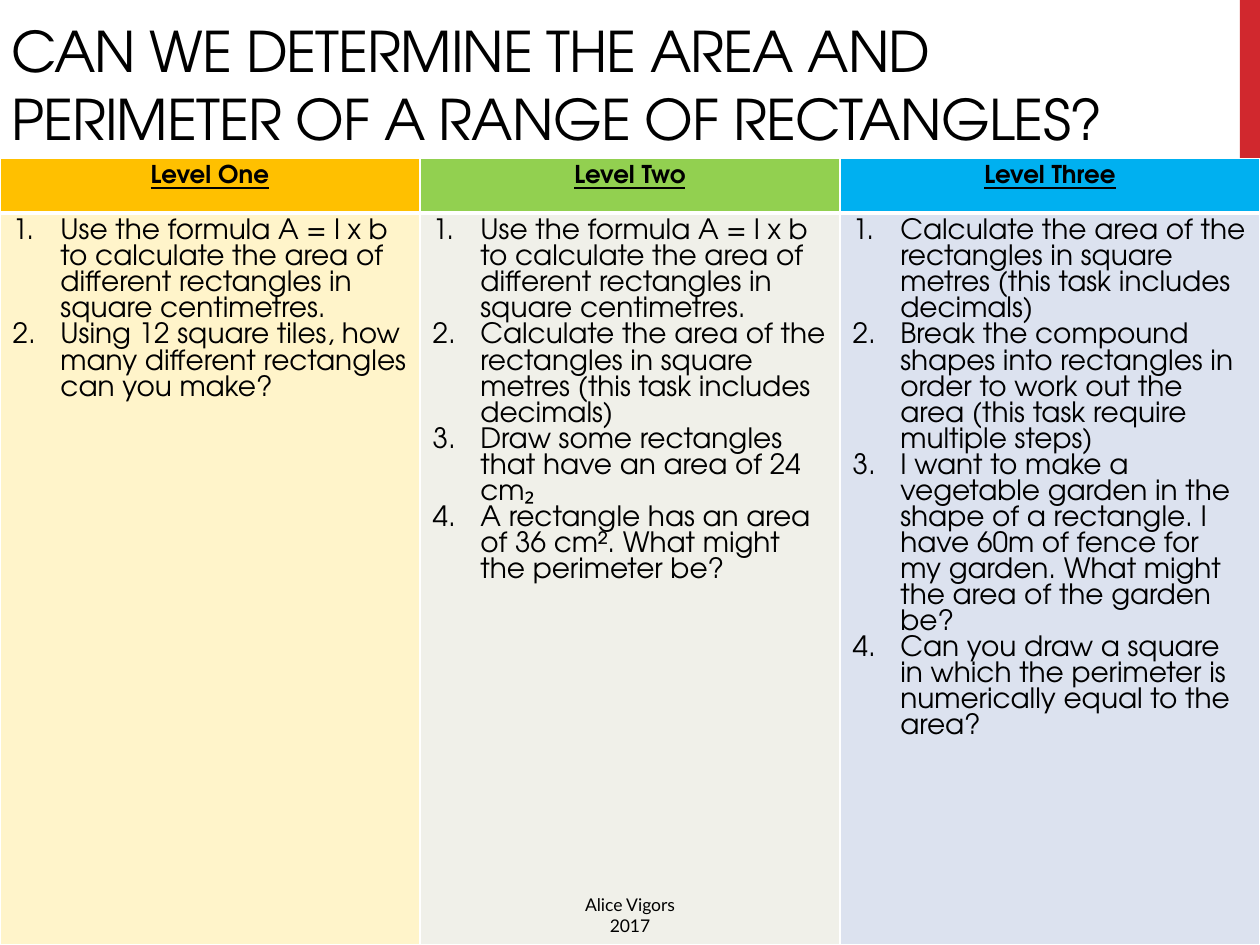
from lxml import etree
from pptx import Presentation
from pptx.dml.color import RGBColor as RGB
from pptx.enum.shapes import MSO_SHAPE as SHAPE
from pptx.enum.text import MSO_ANCHOR as ANCHOR, PP_ALIGN as ALIGN
from pptx.oxml.ns import qn
from pptx.util import Inches, Pt

C = {"red": "D1282E", "ink": "000000", "line": "FFFFFF"}
HEAD_FONT, NOTE_FONT = "TeX Gyre Adventor", "Lato"

prs = Presentation()
prs.slide_width, prs.slide_height = Inches(10), Inches(7.5)
W, H = prs.slide_width, prs.slide_height
s = prs.slides.add_slide(prs.slide_layouts[6])


def write(tf, texts, size, font=HEAD_FONT, align=ALIGN.LEFT, bold=False,
          underline=False, spacing=None, tracking=None, numbered=False):
    """Fill a text frame with one paragraph per text; spacing is in ems."""
    tf.word_wrap = True
    for i, text in enumerate(texts):
        p = tf.add_paragraph() if i else tf.paragraphs[0]
        p.alignment = align
        if spacing:
            p.line_spacing = Pt(size * spacing)
        r = p.add_run()
        r.text = text
        r.font.name, r.font.size = font, Pt(size)
        r.font.bold, r.font.underline = bold, underline
        r.font.color.rgb = RGB.from_string(C["ink"])
        if tracking:
            r.font._element.set("spc", str(int(tracking * 100)))
        if numbered:
            pPr = p._p.get_or_add_pPr()
            pPr.set("marL", str(Inches(0.38)))
            pPr.set("indent", str(-Inches(0.38)))
            etree.SubElement(pPr, qn("a:buFont"), typeface="+mj-lt")
            etree.SubElement(pPr, qn("a:buAutoNum"), type="arabicPeriod")


def border(cell, **widths):
    """Draw cell borders; widths are in points, keyed L, R, T, B."""
    tcPr = cell._tc.get_or_add_tcPr()
    for side, width in widths.items():
        ln = etree.SubElement(tcPr, qn("a:ln" + side), w=str(Pt(width)))
        fill = etree.SubElement(ln, qn("a:solidFill"))
        etree.SubElement(fill, qn("a:srgbClr"), val=C["line"])


# Red accent at the top right
bar = s.shapes.add_shape(SHAPE.RECTANGLE, int(W * 0.984), 0, int(W * 0.016), int(H * 0.2))
bar.shadow.inherit = False
bar.fill.solid()
bar.fill.fore_color.rgb = RGB.from_string(C["red"])
bar.line.fill.background()

# Title
title = s.shapes.add_textbox(Inches(-0.01), 0, int(W * 0.9), Inches(1.25))
title.text_frame.vertical_anchor = ANCHOR.BOTTOM
write(title.text_frame,
      ["CAN WE DETERMINE THE AREA AND PERIMETER OF A RANGE OF RECTANGLES?"],
      size=32, tracking=-0.6)

# Levels: heading, heading fill, body fill, tasks
FORMULA = ("Use the formula A = l x b to calculate the area of different "
           "rectangles in square centimetres.")
METRES = ("Calculate the area of the rectangles in square metres "
          "(this task includes decimals)")
levels = [
    ("Level One", "FFC000", "FFF4CA", [
        FORMULA,
        "Using 12 square tiles, how many different rectangles can you make?"]),
    ("Level Two", "92D050", "F0F0E9", [
        FORMULA,
        METRES,
        "Draw some rectangles that have an area of 24 cm₂",
        "A rectangle has an area of 36 cm². What might the perimeter be?"]),
    ("Level Three", "00B0F0", "DCE2EF", [
        METRES,
        "Break the compound shapes into rectangles in order to work out the "
        "area (this task require multiple steps)",
        "I want to make a vegetable garden in the shape of a rectangle. I have "
        "60m of fence for my garden. What might the area of the garden be?",
        "Can you draw a square in which the perimeter is numerically equal to "
        "the area?"]),
]

# Table with one column per level
top, head_h = Inches(1.26), Inches(0.43)
table = s.shapes.add_table(2, len(levels), 0, top, W, H - top).table
table.rows[0].height, table.rows[1].height = head_h, H - top - head_h
for col, (heading, head_fill, body_fill, tasks) in enumerate(levels):
    table.columns[col].width = W // len(levels)
    head, body = table.cell(0, col), table.cell(1, col)
    border(head, L=1, R=1, T=1, B=3)
    border(body, L=1, R=1, T=3, B=1)
    for cell, color in ((head, head_fill), (body, body_fill)):
        cell.fill.solid()
        cell.fill.fore_color.rgb = RGB.from_string(color)
    write(head.text_frame, [heading], size=14, align=ALIGN.CENTER,
          bold=True, underline=True, spacing=0.93)
    write(body.text_frame, tasks, size=16, spacing=0.93, numbered=True)

# Author and year, centred at the foot
note_w = Inches(1.07)
note = s.shapes.add_textbox((W - note_w) // 2, int(H * 0.94), note_w, Inches(0.44))
write(note.text_frame, ["Alice Vigors 2017"], size=10, font=NOTE_FONT,
      align=ALIGN.CENTER)

prs.save("out.pptx")
